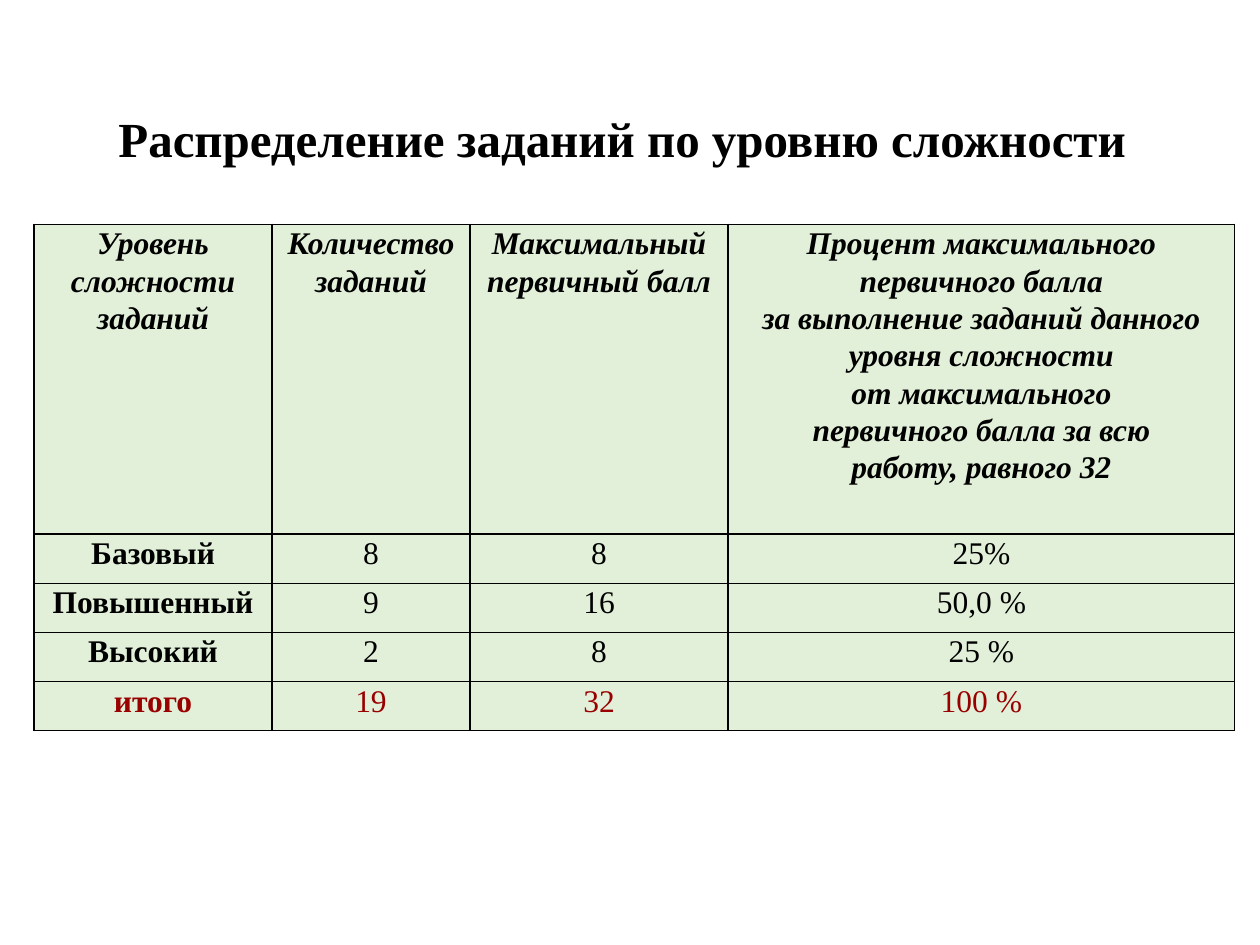
from dataclasses import dataclass

from lxml import etree
from pptx import Presentation
from pptx.dml.color import RGBColor
from pptx.enum.text import MSO_ANCHOR, PP_ALIGN
from pptx.oxml.ns import qn
from pptx.util import Inches, Pt

CENTER, LEFT = PP_ALIGN.CENTER, PP_ALIGN.LEFT
BOTTOM = MSO_ANCHOR.BOTTOM


@dataclass(frozen=True)
class Theme:
    font: str = "Times New Roman"
    title_size: float = 28
    cell_size: float = 18
    text: str = "000000"
    total: str = "990000"
    fill: str = "E2F0D9"
    border: str = "000000"
    border_width: float = 1
    line_spacing: float = 1.07


THEME = Theme()
TITLE = "Распределение заданий по уровню сложности"
COL_WIDTHS = [1.89, 1.57, 2.05, 4.02]
HEADER_HEIGHT, ROW_HEIGHT = 2.46, 0.39
ROWS = [
    ["Уровень\nсложности\nзаданий",
     "Количество заданий",
     "Максимальный\nпервичный балл",
     "Процент максимального\nпервичного балла\n"
     "за выполнение заданий данного уровня сложности\n"
     "от максимального\nпервичного балла за всю\nработу, равного 32"],
    ["Базовый", "8", "8", "25%"],
    ["Повышенный", "9", "16", "50,0 %"],
    ["Высокий", "2", "8", "25 %"],
    ["итого", "19", "32", "100 %"],
]


def set_attrs(obj, values):
    for name, value in values.items():
        setattr(obj, name, value)


def write_text(tf, text, color, font, paragraph):
    tf.text = text
    for p in tf.paragraphs:
        set_attrs(p, paragraph)
        for r in p.runs:
            set_attrs(r.font, {"name": THEME.font, **font})
            r.font.color.rgb = RGBColor.from_string(color)


def add_borders(cell):
    tc_pr = cell._tc.get_or_add_tcPr()
    for i, side in enumerate(("a:lnL", "a:lnR", "a:lnT", "a:lnB")):
        ln = etree.Element(qn(side), w=str(Pt(THEME.border_width)))
        fill = etree.SubElement(ln, qn("a:solidFill"))
        etree.SubElement(fill, qn("a:srgbClr"), val=THEME.border)
        tc_pr.insert(i, ln)


def format_cell(cell, text, row, col):
    is_header = row == 0
    is_total = row == len(ROWS) - 1
    set_attrs(cell, {"margin_left": Inches(0.08), "margin_right": Inches(0.08),
                     "margin_top": 0, "margin_bottom": 0})
    cell.fill.solid()
    cell.fill.fore_color.rgb = RGBColor.from_string(THEME.fill)
    add_borders(cell)
    write_text(cell.text_frame, text, THEME.total if is_total else THEME.text,
               {"size": Pt(THEME.cell_size), "bold": is_header or col == 0,
                "italic": is_header},
               {"alignment": CENTER, "line_spacing": THEME.line_spacing})


def add_levels_table(slide):
    heights = [HEADER_HEIGHT] + [ROW_HEIGHT] * (len(ROWS) - 1)
    table = slide.shapes.add_table(
        len(ROWS), len(COL_WIDTHS), Inches(0.27), Inches(1.78),
        Inches(sum(COL_WIDTHS)), Inches(sum(heights))).table
    for column, width in zip(table.columns, COL_WIDTHS):
        column.width = Inches(width)
    for row, height in zip(table.rows, heights):
        row.height = Inches(height)
    for i, texts in enumerate(ROWS):
        for j, text in enumerate(texts):
            format_cell(table.cell(i, j), text, i, j)


def add_title(slide):
    sp = slide.shapes.add_textbox(
        Inches(0.67), Inches(0.5), Inches(8.58), Inches(0.88))
    tf = sp.text_frame
    set_attrs(tf, {"word_wrap": True, "vertical_anchor": BOTTOM,
                   "margin_left": Inches(0.27)})
    write_text(tf, TITLE, THEME.text,
               {"size": Pt(THEME.title_size), "bold": True},
               {"alignment": LEFT})


def main():
    prs = Presentation()
    set_attrs(prs, {"slide_width": Inches(10), "slide_height": Inches(7.5)})
    slide = prs.slides.add_slide(prs.slide_layouts[6])
    add_levels_table(slide)
    add_title(slide)
    prs.save("out.pptx")


if __name__ == "__main__":
    main()
